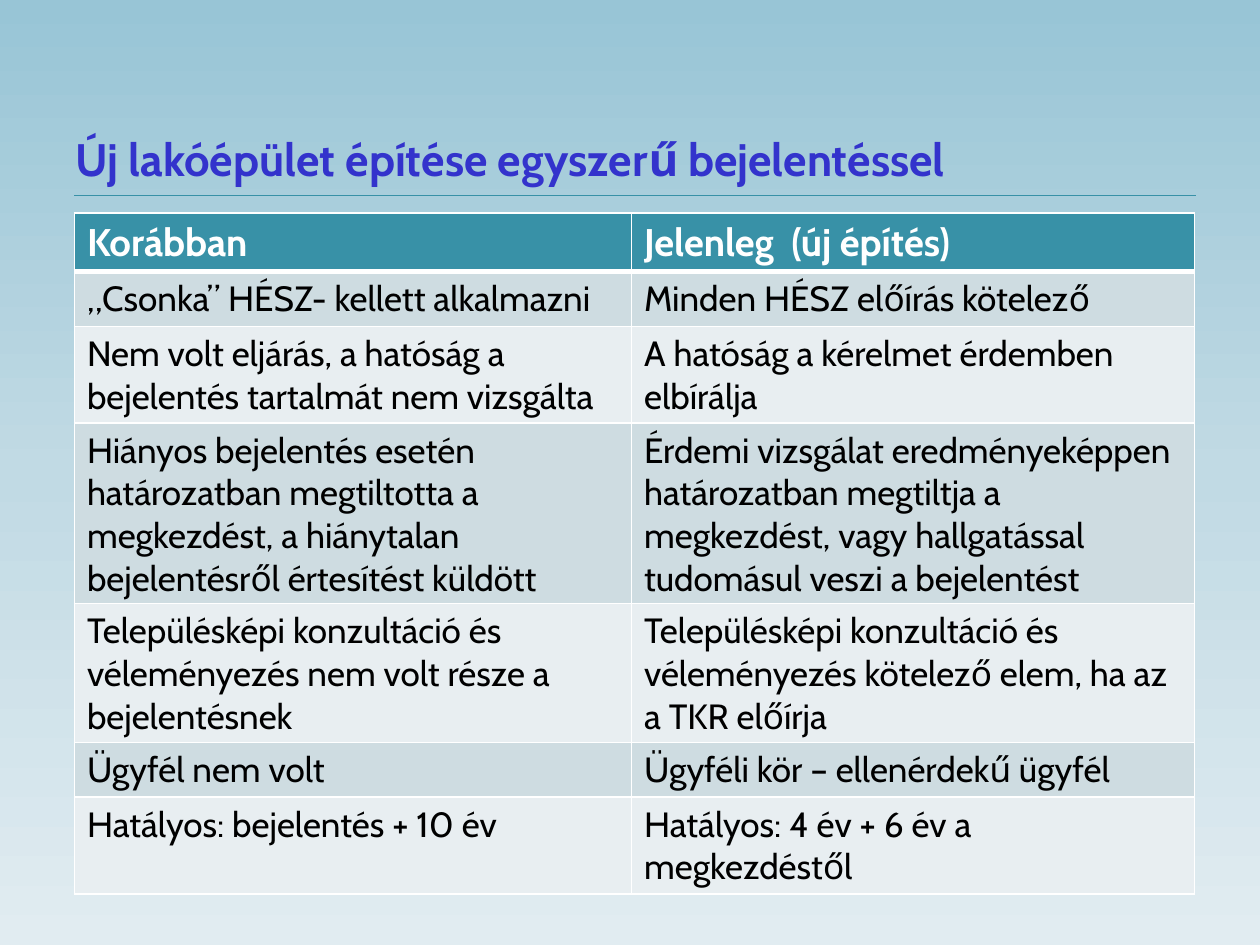
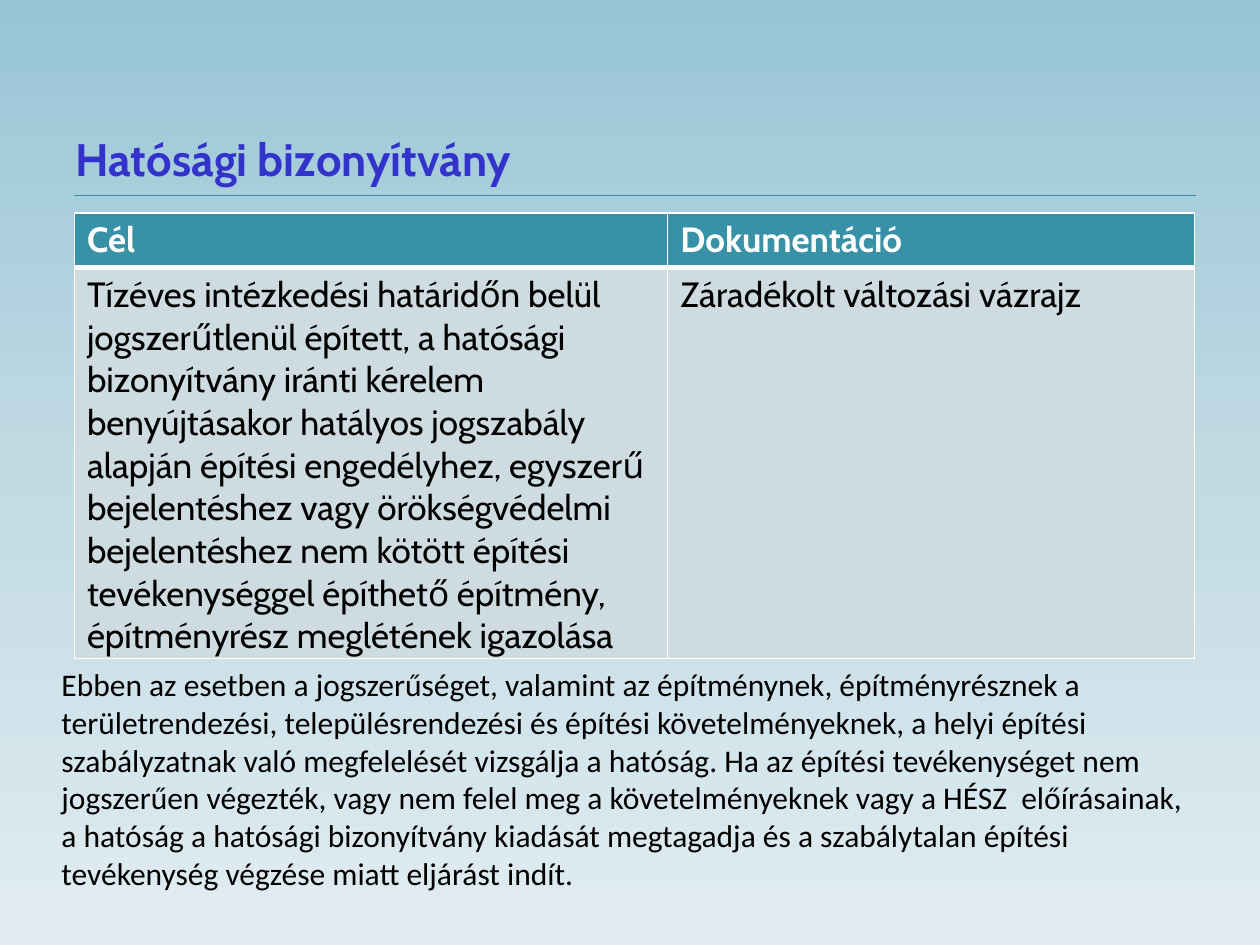
from dataclasses import dataclass

from lxml import etree
from pptx import Presentation
from pptx.dml.color import RGBColor
from pptx.enum.shapes import MSO_CONNECTOR
from pptx.enum.text import MSO_ANCHOR
from pptx.oxml.ns import qn
from pptx.util import Cm, Pt

STRAIGHT = MSO_CONNECTOR.STRAIGHT
MIDDLE = MSO_ANCHOR.MIDDLE


@dataclass(frozen=True)
class Theme:
    sky: tuple = ((0, "98C5D6"), (50, "C1DAE4"), (100, "E1ECF1"))
    title: str = "3333CC"
    teal: str = "3891A7"
    bands: tuple = ("CEDCE1", "E8EEF1")
    white: str = "FFFFFF"
    black: str = "000000"
    main: str = "Cabin"
    plain: str = "Calibri"
    title_size: int = 26
    cell_size: int = 20
    note_size: int = 18
    thin: int = 1
    thick: int = 3


THEME = Theme()
TITLE_BOX = (1.27, 2.24, 23.5, 2.06)
RULE_BOX = (1.5, 3.94, 22.6, 0)
TABLE_BOX = (1.5, 4.29, 22.58)
NOTE_BOX = (0.99, 13.28, 23.52, 5.64)
ROW_HEIGHT = 1.04

BUILD_ROWS = (
    ("Korábban", "Jelenleg  (új építés)"),
    ("„Csonka” HÉSZ- kellett alkalmazni", "Minden HÉSZ előírás kötelező"),
    ("Nem volt eljárás, a hatóság a bejelentés tartalmát nem vizsgálta",
     "A hatóság a kérelmet érdemben elbírálja"),
    ("Hiányos bejelentés esetén határozatban megtiltotta a megkezdést, "
     "a hiánytalan bejelentésről értesítést küldött",
     "Érdemi vizsgálat eredményeképpen határozatban megtiltja a megkezdést, "
     "vagy hallgatással tudomásul veszi a bejelentést"),
    ("Településképi konzultáció és véleményezés nem volt része a bejelentésnek",
     "Településképi konzultáció és véleményezés kötelező elem, ha az a TKR előírja"),
    ("Ügyfél nem volt", "Ügyféli kör – ellenérdekű ügyfél"),
    ("Hatályos: bejelentés + 10 év", "Hatályos: 4 év + 6 év a megkezdéstől"),
)

PROOF_ROWS = (
    ("Cél", "Dokumentáció"),
    ("Tízéves intézkedési határidőn belül jogszerűtlenül épített, a hatósági "
     "bizonyítvány iránti kérelem benyújtásakor hatályos jogszabály alapján "
     "építési engedélyhez, egyszerű bejelentéshez vagy örökségvédelmi "
     "bejelentéshez nem kötött építési tevékenységgel építhető építmény, "
     "építményrész meglétének igazolása",
     "Záradékolt változási vázrajz"),
)

PROOF_NOTE = (
    "Ebben az esetben a jogszerűséget, valamint az építménynek, építményrésznek a "
    "területrendezési, településrendezési és építési követelményeknek, a helyi "
    "építési szabályzatnak való megfelelését vizsgálja a hatóság. Ha az építési "
    "tevékenységet nem jogszerűen végezték, vagy nem felel meg a követelményeknek "
    "vagy a HÉSZ  előírásainak, a hatóság a hatósági bizonyítvány kiadását "
    "megtagadja és a szabálytalan építési tevékenység végzése miatt eljárást indít."
)


def rgb(code):
    return RGBColor.from_string(code)


def write(frame, text, face, size, color, bold=False):
    frame.word_wrap = True
    para = frame.paragraphs[0]
    para.text = text
    font = para.font
    font.name, font.size, font.bold = face, Pt(size), bold
    font.color.rgb = rgb(color)
    return para


def add_color(parent, code):
    etree.SubElement(parent, qn("a:srgbClr"), val=code)


def paint_sky(slide):
    fill = slide.background.fill
    fill.gradient()
    fill.gradient_angle = 270
    stops = slide.element.find(".//" + qn("a:gsLst"))
    for stop in list(stops):
        stops.remove(stop)
    for place, code in THEME.sky:
        add_color(etree.SubElement(stops, qn("a:gs"), pos=str(place * 1000)), code)


def add_title(slide, text, box):
    frame = slide.shapes.add_textbox(*map(Cm, box)).text_frame
    frame.vertical_anchor = MIDDLE
    para = write(frame, text, THEME.main, THEME.title_size, THEME.title, True)
    para.line_spacing = 0.9


def add_rule(slide, box):
    left, top, width, height = box
    ends = map(Cm, (left, top, left + width, top + height))
    rule = slide.shapes.add_connector(STRAIGHT, *ends)
    rule.line.color.rgb = rgb(THEME.teal)
    rule.line.width = Pt(0.5)
    etree.SubElement(rule.element.spPr, qn("a:effectLst"))


def add_edges(cell, top, bottom):
    props = cell._tc.get_or_add_tcPr()
    widths = {"L": THEME.thin, "R": THEME.thin, "T": top, "B": bottom}
    for side, width in widths.items():
        edge = etree.SubElement(props, qn("a:ln" + side), w=str(Pt(width)))
        add_color(etree.SubElement(edge, qn("a:solidFill")), THEME.white)


def add_grid(slide, rows, split, head_size, box):
    left, top, width = box
    size = map(Cm, (left, top, width, ROW_HEIGHT * len(rows)))
    table = slide.shapes.add_table(len(rows), 2, *size).table
    for column, span in zip(table.columns, (split, width - split)):
        column.width = Cm(span)
    for i, row in enumerate(rows):
        head = i == 0
        shade = THEME.teal if head else THEME.bands[(i - 1) % 2]
        ink = THEME.white if head else THEME.black
        points = head_size if head else THEME.cell_size
        upper = THEME.thick if i == 1 else THEME.thin
        lower = THEME.thick if head else THEME.thin
        for j, text in enumerate(row):
            cell = table.cell(i, j)
            add_edges(cell, upper, lower)
            cell.fill.solid()
            cell.fill.fore_color.rgb = rgb(shade)
            write(cell.text_frame, text, THEME.main, points, ink, head)


def add_note(slide, text, box):
    frame = slide.shapes.add_textbox(*map(Cm, box)).text_frame
    write(frame, text, THEME.plain, THEME.note_size, THEME.black)


def add_page(deck, title, rows, split, head_size):
    slide = deck.slides.add_slide(deck.slide_layouts[6])
    paint_sky(slide)
    add_title(slide, title, TITLE_BOX)
    add_rule(slide, RULE_BOX)
    add_grid(slide, rows, split, head_size, TABLE_BOX)
    return slide


def main():
    deck = Presentation()
    deck.slide_width, deck.slide_height = Cm(25.4), Cm(19.05)
    add_page(deck, "Új lakóépület építése egyszerű bejelentéssel", BUILD_ROWS, 11.23, 22)
    proof = add_page(deck, "Hatósági bizonyítvány", PROOF_ROWS, 11.96, 20)
    add_note(proof, PROOF_NOTE, NOTE_BOX)
    deck.save("out.pptx")


if __name__ == "__main__":
    main()
